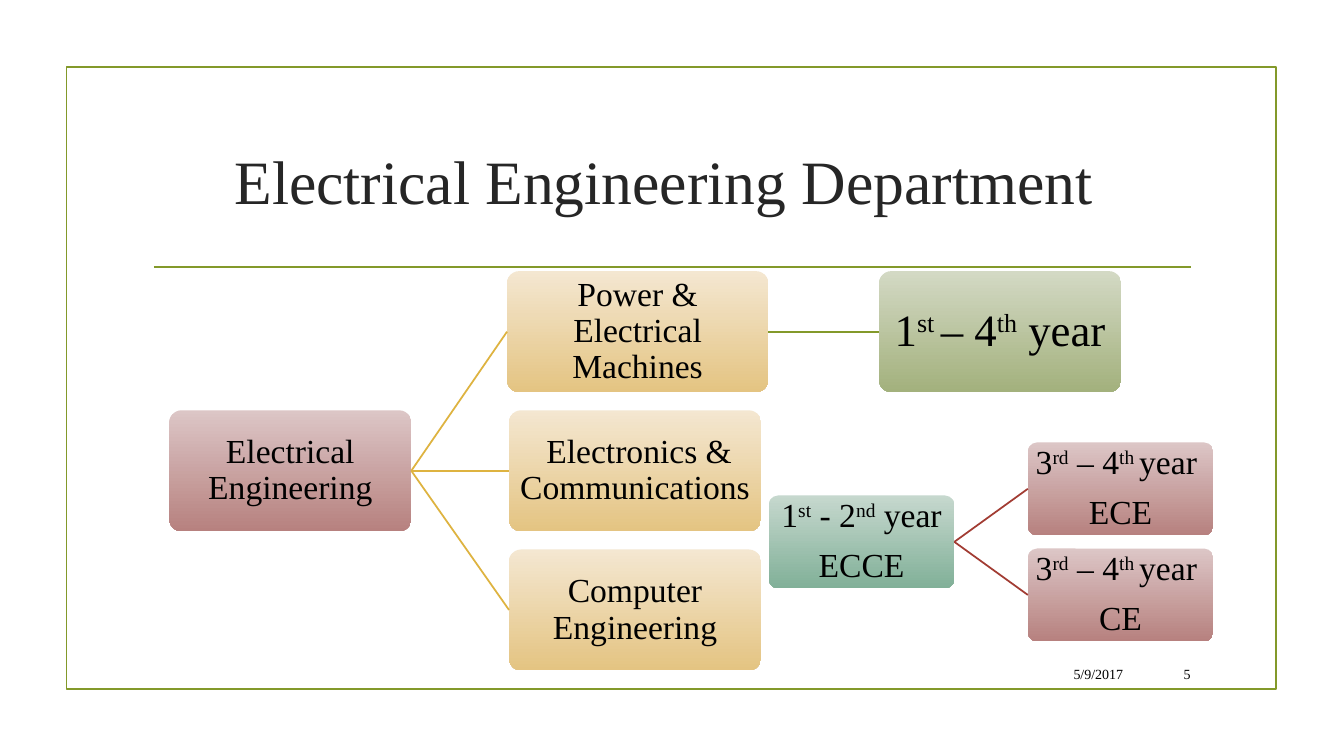
"""Build the Electrical Engineering Department slide."""
import pptx
import pptx.util
import pptx.dml.color
import pptx.enum.shapes
import pptx.enum.text
import pptx.oxml.ns
import lxml.etree

Pt = pptx.util.Pt
RGB = pptx.dml.color.RGBColor
SHAPE = pptx.enum.shapes.MSO_SHAPE
ALIGN = pptx.enum.text.PP_ALIGN
MIDDLE = pptx.enum.text.MSO_ANCHOR.MIDDLE

BLACK = RGB(0x00, 0x00, 0x00)
INK = RGB(0x26, 0x26, 0x26)
OLIVE = RGB(0x83, 0x99, 0x2A)
GOLD = RGB(0xDE, 0xB3, 0x40)
RED = RGB(0xA2, 0x3C, 0x33)
ROSE = (RGB(0xDC, 0xC6, 0xC6), RGB(0xB7, 0x81, 0x7F))
SAND = (RGB(0xF4, 0xE7, 0xD1), RGB(0xE4, 0xC4, 0x82))
MOSS = (RGB(0xD3, 0xD9, 0xC4), RGB(0xA3, 0xB1, 0x7D))
TEAL = (RGB(0xC6, 0xD8, 0xCE), RGB(0x81, 0xB0, 0x98))

TITLE = "Electrical Engineering Department "
FACE = "Times New Roman"
BIG, SMALL = 86.4, 66.3
TOP, STEP = 193.7, 99.4
LOW, DROP = 316, 75.8

# name: (lines, left, top, width, height, size, shades); ^ toggles superscript
NODES = {
    "root": (["Electrical Engineering"], 121, TOP + STEP, 172.8, BIG, 24, ROSE),
    "power": (["Power & Electrical Machines"], 362.2, TOP, 186.5, BIG, 24, SAND),
    "years": (["1^st ^– 4^th^ year"], 628, TOP, 172.8, BIG, 32, MOSS),
    "comms": ([" Electronics & Communications"], 363.6, TOP + STEP, 180, BIG, 24, SAND),
    "comp": (["Computer Engineering"], 363.6, TOP + 2 * STEP, 180, BIG, 24, SAND),
    "ecce": (["1^st^ - 2^nd^ year", "ECCE"], 549.2, LOW + DROP / 2, 132.5, SMALL, 24, TEAL),
    "ece": (["3^rd^ – 4^th ^year ", "ECE"], 734.2, LOW, 132.5, SMALL, 24, ROSE),
    "ce": (["3^rd^ – 4^th ^year ", "CE"], 734.2, LOW + DROP, 132.5, SMALL, 24, ROSE),
}
LINKS = [
    ("root", "power", GOLD),
    ("root", "comms", GOLD),
    ("root", "comp", GOLD),
    ("power", "years", OLIVE),
    ("ecce", "ece", RED),
    ("ecce", "ce", RED),
]
NOTES = [("5/9/2017", 683.3, 126), ("5", 815, 42.5)]


def style(item, **values):
    for key, value in values.items():
        setattr(item, key, value)


def write(shape, lines, size, color=BLACK, align=ALIGN.CENTER, para=None, **frame):
    text = shape.text_frame
    style(text, word_wrap=True, vertical_anchor=MIDDLE, **frame)
    for num, line in enumerate(lines):
        part = text.add_paragraph() if num else text.paragraphs[0]
        style(part, alignment=align, **(para or {}))
        for turn, piece in enumerate(line.split("^")):
            run = part.add_run()
            run.text = piece
            style(run.font, name=FACE, size=Pt(size))
            run.font.color.rgb = color
            if turn % 2:
                run._r.get_or_add_rPr().set("baseline", "30000")


def stroke(item, color):
    item.line.color.rgb = color
    item.line.width = Pt(1.25)


def join(slide, x1, y1, x2, y2, color):
    line = slide.shapes.add_connector(
        pptx.enum.shapes.MSO_CONNECTOR.STRAIGHT, Pt(x1), Pt(y1), Pt(x2), Pt(y2))
    stroke(line, color)
    lxml.etree.SubElement(line._element.spPr, pptx.oxml.ns.qn("a:effectLst"))
    return line


def add_node(slide, lines, left, top, width, height, size, shades):
    box = slide.shapes.add_shape(
        SHAPE.ROUNDED_RECTANGLE, Pt(left), Pt(top), Pt(width), Pt(height))
    box.shadow.inherit = False
    box.adjustments[0] = 0.1
    box.fill.gradient()
    box.fill.gradient_angle = 270
    for stop, shade in zip(box.fill.gradient_stops, shades):
        stop.color.rgb = shade
    box.line.fill.background()
    edges = ("margin_left", "margin_right", "margin_top", "margin_bottom")
    write(box, lines, size, para={"line_spacing": 0.9, "space_after": Pt(9.6)},
          **dict.fromkeys(edges, Pt(1.4)))
    return box


def main():
    deck = pptx.Presentation()
    style(deck, slide_width=Pt(960), slide_height=Pt(540))
    slide = deck.slides.add_slide(deck.slide_layouts[5])

    frame = slide.shapes.add_shape(SHAPE.RECTANGLE, Pt(47.6), Pt(48), Pt(864), Pt(444))
    frame.shadow.inherit = False
    frame.fill.background()
    stroke(frame, OLIVE)
    join(slide, 110, 190.8, 850.4, 190.8, OLIVE)

    title = slide.shapes.title
    style(title, left=Pt(102), top=Pt(77), width=Pt(756), height=Pt(103))
    write(title, [TITLE], 44, INK, auto_size=pptx.enum.text.MSO_AUTO_SIZE.NONE)

    boxes = {name: add_node(slide, *node) for name, node in NODES.items()}
    for start, end, color in LINKS:
        line = join(slide, 0, 0, 0, 0, color)
        line.begin_connect(boxes[start], 3)
        line.end_connect(boxes[end], 1)

    for note, left, width in NOTES:
        box = slide.shapes.add_textbox(Pt(left), Pt(470), Pt(width), Pt(22.3))
        write(box, [note], 10, align=ALIGN.RIGHT)

    deck.save("out.pptx")


if __name__ == "__main__":
    main()
